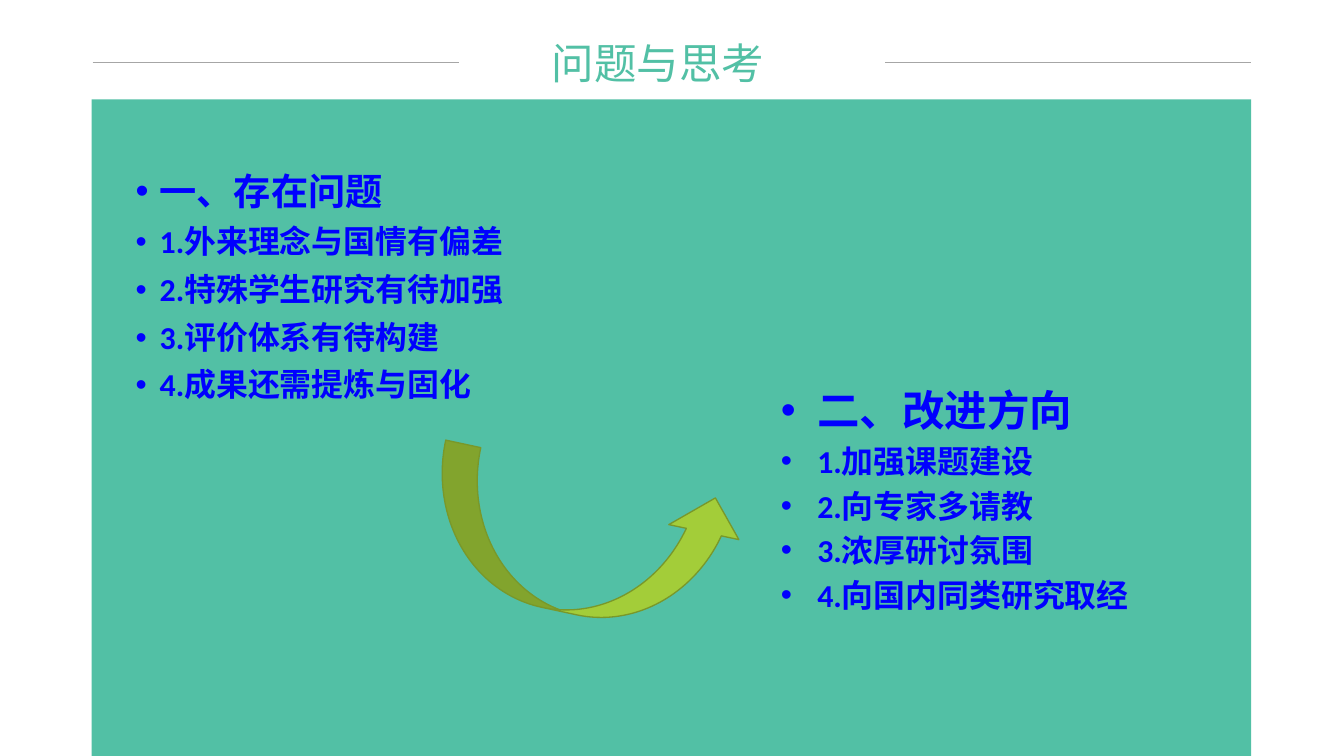
"""Build the slide on problems and ways to improve."""
import pptx
import pptx.dml.color
import pptx.enum.shapes
import pptx.enum.text
import pptx.oxml
import pptx.util

Inches = pptx.util.Inches
Pt = pptx.util.Pt
kinds = pptx.enum.shapes.MSO_SHAPE
anchor = pptx.enum.text.MSO_ANCHOR
align = pptx.enum.text.PP_ALIGN


def tint(code):
    return pptx.dml.color.RGBColor.from_string(code)


def place(shape, box):
    for side, size in zip(("left", "top", "width", "height"), box):
        setattr(shape, side, Inches(size))


deck = pptx.Presentation()
deck.slide_width = Inches(14.06)
deck.slide_height = Inches(7.91)
slide = deck.slides.add_slide(deck.slide_layouts[3])
shapes = slide.shapes
title, left, right = slide.placeholders

panel = shapes.add_shape(kinds.RECTANGLE, 0, 0, 0, 0)
place(panel, (0.96, 1.04, 12.13, 6.87))
panel.shadow.inherit = False
panel.fill.solid()
panel.fill.fore_color.rgb = tint("52C0A5")
panel.line.fill.background()
title.element.addprevious(panel.element)

place(title, (5.77, 0.38, 4.32, 0.54))
frame = title.text_frame
frame.text = "问题与思考"
style = {
    "margin_left": 0, "margin_right": 0, "margin_top": 0, "margin_bottom": 0,
    "vertical_anchor": anchor.MIDDLE, "auto_size": pptx.enum.text.MSO_AUTO_SIZE.NONE,
}
for key, value in style.items():
    setattr(frame, key, value)
head = frame.paragraphs[0]
head.alignment = align.LEFT
head.font.name = "Arial"
head.font.size = Pt(32)
head.font.color.rgb = tint("52C0A5")

for start in (0.97, 9.26):
    rule = shapes.add_connector(
        pptx.enum.shapes.MSO_CONNECTOR.STRAIGHT,
        Inches(start), Inches(0.65), Inches(start + 3.83), Inches(0.65))
    rule.line.color.rgb = tint("A6A6A6")
    rule.line.width = Pt(0.5)
    props = rule.element.spPr
    props.append(pptx.oxml.parse_xml(
        '<a:effectLst xmlns:a="http://schemas.openxmlformats.org/drawingml/2006/main"/>'))

lists = [
    (left, (1.32, 1.76, 4.49, 3.07), 28, 0.25,
     {"line_spacing": 0.9, "space_before": Pt(10)},
     ["一、存在问题", "1.外来理念与国情有偏差", "2.特殊学生研究有待加强",
      "3.评价体系有待构建", "4.成果还需提炼与固化"]),
    (right, (8.07, 3.97, 4.8, 3.31), 32, 0.38, {},
     ["二、改进方向", "1.加强课题建设", "2.向专家多请教",
      "3.浓厚研讨氛围", "4.向国内同类研究取经"]),
]
for body, box, large, indent, gaps, lines in lists:
    place(body, box)
    body.text_frame.text = "\n".join(lines)
    body.text_frame.auto_size = pptx.enum.text.MSO_AUTO_SIZE.NONE
    for row, para in enumerate(body.text_frame.paragraphs):
        for key, value in gaps.items():
            setattr(para, key, value)
        props = para._p.get_or_add_pPr()
        props.set("marL", str(Inches(indent)))
        props.set("indent", str(-Inches(indent)))
        font = {"name": "Calibri", "bold": True, "size": Pt(24 if row else large)}
        for key, value in font.items():
            setattr(para.runs[0].font, key, value)
        para.runs[0].font.color.rgb = tint("0000FF")

arrow = shapes.add_shape(kinds.CURVED_RIGHT_ARROW, 0, 0, 0, 0)
place(arrow, (5.35, 4.05, 1.5, 3.26))
arrow.rotation = 282.1
arrow.shadow.inherit = False
arrow.fill.solid()
arrow.fill.fore_color.rgb = tint("A3CD39")
arrow.line.color.rgb = tint("79982A")
arrow.line.width = Pt(1)

deck.save("out.pptx")
